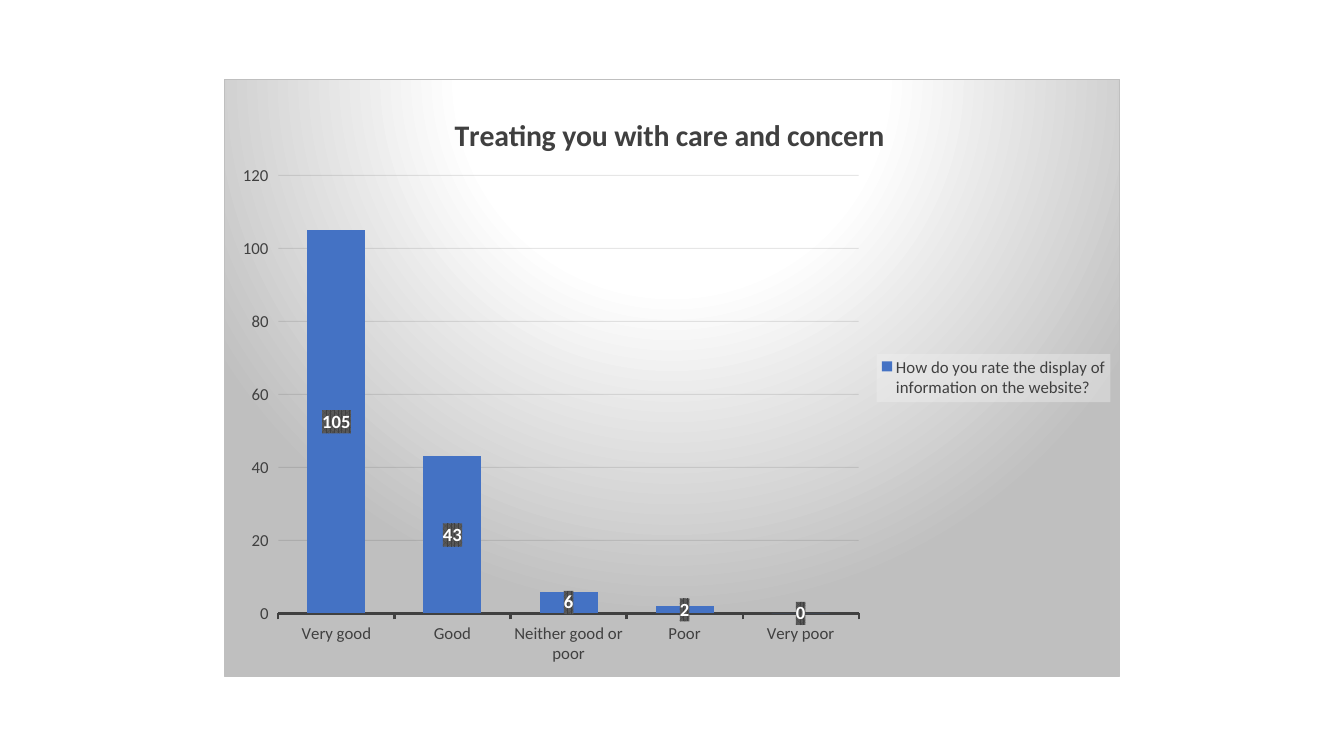
from lxml import etree
from pptx import Presentation
from pptx.chart.data import CategoryChartData
from pptx.dml.color import RGBColor
from pptx.enum.chart import XL_CHART_TYPE, XL_LABEL_POSITION, XL_LEGEND_POSITION, XL_TICK_MARK
from pptx.util import Pt

COLUMNS = XL_CHART_TYPE.COLUMN_CLUSTERED
CENTER = XL_LABEL_POSITION.CENTER
RIGHT = XL_LEGEND_POSITION.RIGHT
OUTSIDE = XL_TICK_MARK.OUTSIDE

EMU_PER_PX = 914400 / 100.8
NAMESPACES = ('xmlns:c="http://schemas.openxmlformats.org/drawingml/2006/chart" '
              'xmlns:a="http://schemas.openxmlformats.org/drawingml/2006/main"')
COLORS = {"text": "404040", "bar": "4472C4", "grid": "0D0D0D", "white": "FFFFFF",
          "edge": "BFBFBF", "label": "595959", "legend": "F2F2F2"}

CHART_BOX = (224, 79, 896, 598)
PLOT_BOX = (278, 175, 581, 439)
LEGEND_BOX = (877, 354, 234, 48)
TITLE_CORNER = (449, 109)

TITLE = "Treating you with care and concern"
QUESTION = "How do you rate the display of information on the website?"
RATINGS = {"Very good": 105, "Good": 43, "Neither good or poor": 6, "Poor": 2, "Very poor": 0}


def px(length):
    return round(length * EMU_PER_PX)


def color_xml(name, alpha=100):
    return f'<a:srgbClr val="{COLORS[name]}"><a:alpha val="{alpha * 1000}"/></a:srgbClr>'


def add_properties(text_properties, content):
    """Put a c:spPr holding the given fill and line before a c:txPr."""
    text_properties.addprevious(etree.fromstring(f"<c:spPr {NAMESPACES}>{content}</c:spPr>"))


def place(element, index, box, target=""):
    """Give a chart part a manual layout from its box on the slide."""
    left, top, width, height = CHART_BOX
    values = [(box[0] - left) / width, (box[1] - top) / height]
    if len(box) == 4:
        values += [box[2] / width, box[3] / height]
    modes = '<c:xMode val="edge"/><c:yMode val="edge"/>'
    numbers = "".join(f'<c:{key} val="{value:.4f}"/>' for key, value in zip("xywh", values))
    for layout in element.xpath("c:layout"):
        element.remove(layout)
    element.insert(index, etree.fromstring(
        f"<c:layout {NAMESPACES}><c:manualLayout>{target}{modes}{numbers}"
        "</c:manualLayout></c:layout>"))


class SlideBuilder:
    def __init__(self, presentation):
        self.font_name = "Calibri"
        self.slide = presentation.slides.add_slide(presentation.slide_layouts[6])

    def style_font(self, font, size, color="text", bold=False):
        font.name = self.font_name
        font.size = Pt(size)
        font.bold = bold
        font.color.rgb = RGBColor.from_string(COLORS[color])

    def add_column_chart(self, box, series_name, ratings):
        data = CategoryChartData()
        data.categories = list(ratings)
        data.add_series(series_name, list(ratings.values()))
        chart = self.slide.shapes.add_chart(COLUMNS, *map(px, box), data).chart
        self.style_font(chart.font, 10)
        plot = chart.plots[0]
        plot.gap_width = 100
        plot.vary_by_categories = False
        fill = plot.series[0].format.fill
        fill.solid()
        fill.fore_color.rgb = RGBColor.from_string(COLORS["bar"])
        place(chart._chartSpace.chart.plotArea, 0, PLOT_BOX, '<c:layoutTarget val="inner"/>')
        return chart

    def add_background(self, chart):
        stops = "".join(f'<a:gs pos="{position * 1000}">{color_xml(name)}</a:gs>'
                        for position, name in ((0, "white"), (39, "white"), (100, "edge")))
        add_properties(
            chart._chartSpace.xpath("c:txPr")[0],
            f'<a:gradFill><a:gsLst>{stops}</a:gsLst><a:path path="circle">'
            '<a:fillToRect l="50000" t="-80000" r="50000" b="180000"/></a:path></a:gradFill>'
            f'<a:ln w="9525"><a:solidFill>{color_xml("edge")}</a:solidFill></a:ln>')

    def add_title(self, chart, text):
        chart.has_title = True
        title = chart.chart_title
        title.text_frame.text = text
        self.style_font(title.text_frame.paragraphs[0].runs[0].font, 21.3, bold=True)
        title.include_in_layout = False
        place(title._element, 1, TITLE_CORNER)

    def style_axes(self, chart):
        for axis in (chart.category_axis, chart.value_axis):
            self.style_font(axis.tick_labels.font, 12)
            axis.major_tick_mark = OUTSIDE
        line = chart.category_axis.format.line
        line.width = Pt(1.5)
        line.color.rgb = RGBColor.from_string(COLORS["text"])
        axis = chart.value_axis
        axis.format.line.fill.background()
        axis.minimum_scale, axis.maximum_scale, axis.major_unit = 0, 120, 20
        grid = axis.major_gridlines.format.line
        grid.width = Pt(0.75)
        grid.color.rgb = RGBColor.from_string(COLORS["grid"])
        color = axis._element.xpath("c:majorGridlines//a:srgbClr")[0]
        color.append(etree.fromstring(f'<a:alpha {NAMESPACES} val="10000"/>'))

    def add_labels(self, chart):
        labels = chart.plots[0].series[0].data_labels
        labels.show_value = True
        labels.position = CENTER
        self.style_font(labels.font, 13.3, "white", bold=True)
        add_properties(
            labels._element.xpath("c:txPr")[0],
            f'<a:pattFill prst="pct75"><a:fgClr>{color_xml("text")}</a:fgClr>'
            f'<a:bgClr>{color_xml("label")}</a:bgClr></a:pattFill><a:ln><a:noFill/></a:ln>')

    def add_legend(self, chart):
        chart.has_legend = True
        legend = chart.legend
        legend.position = RIGHT
        legend.include_in_layout = False
        self.style_font(legend.font, 12)
        add_properties(legend._element.xpath("c:txPr")[0],
                       f'<a:solidFill>{color_xml("legend", 39)}</a:solidFill>')
        place(legend._element, 1, LEGEND_BOX)


def main():
    presentation = Presentation()
    presentation.slide_width = px(1344)
    presentation.slide_height = px(756)
    builder = SlideBuilder(presentation)
    chart = builder.add_column_chart(CHART_BOX, QUESTION, RATINGS)
    builder.add_background(chart)
    builder.add_title(chart, TITLE)
    builder.style_axes(chart)
    builder.add_labels(chart)
    builder.add_legend(chart)
    presentation.save("out.pptx")


if __name__ == "__main__":
    main()
